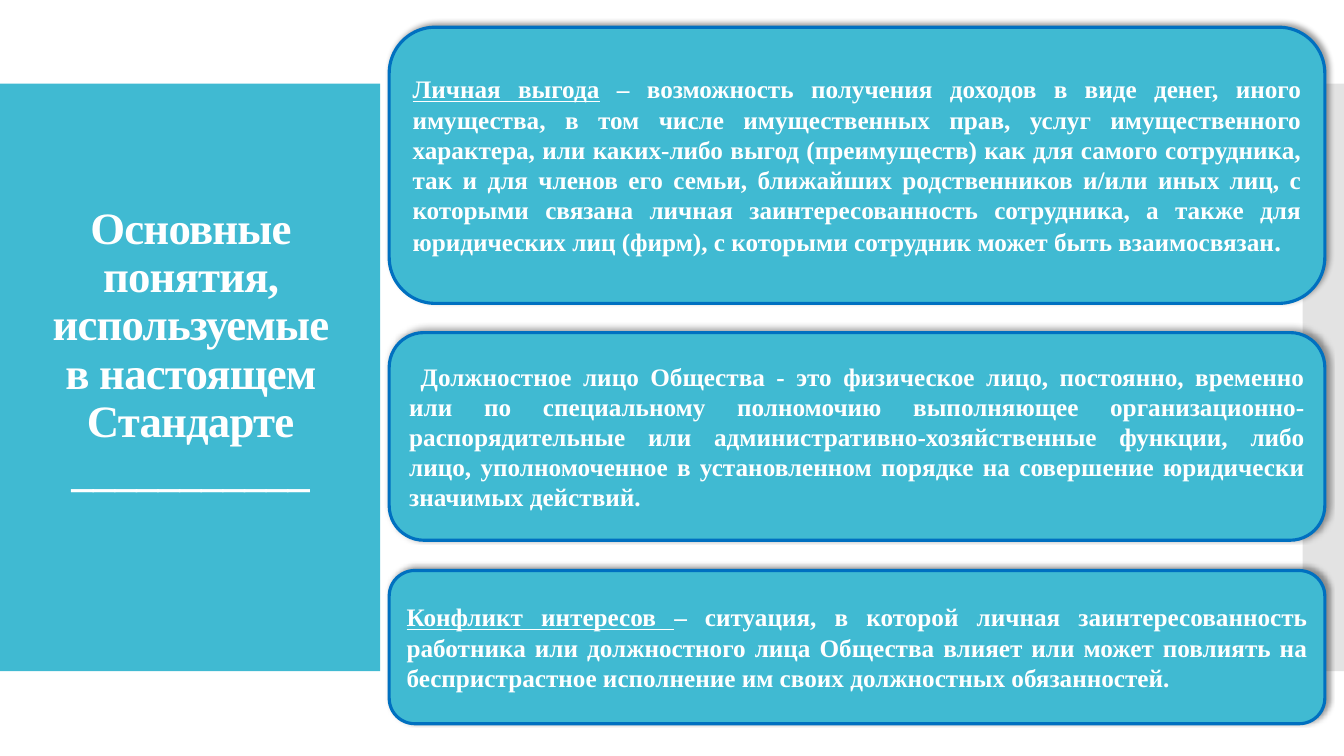
import pptx
import pptx.util
import pptx.dml.color
import pptx.enum.shapes
import pptx.enum.text
import pptx.oxml
import pptx.oxml.ns
import lxml.etree

Inches = pptx.util.Inches
Pt = pptx.util.Pt
RGBColor = pptx.dml.color.RGBColor
MSO_SHAPE = pptx.enum.shapes.MSO_SHAPE
MSO_ANCHOR = pptx.enum.text.MSO_ANCHOR
PP_ALIGN = pptx.enum.text.PP_ALIGN
qn = pptx.oxml.ns.qn

TEAL = RGBColor(0x40, 0xBA, 0xD2)
GRAY = RGBColor(0xC8, 0xC8, 0xC8)
BLUE = RGBColor(0x00, 0x70, 0xC0)
WHITE = RGBColor(0xFF, 0xFF, 0xFF)

SHADOW = (
    f'<a:effectLst {pptx.oxml.ns.nsdecls("a")}>'
    f'<a:outerShdw blurRad="{Pt(4)}" dist="{Pt(3)}" dir="{315 * 60000}" algn="bl" rotWithShape="0">'
    '<a:srgbClr val="000000"><a:alpha val="40000"/></a:srgbClr>'
    '</a:outerShdw></a:effectLst>'
)


def add_block(preset, left, top, width, height, color):
    block = slide.shapes.add_shape(preset, Inches(left), Inches(top), Inches(width), Inches(height))
    block.shadow.inherit = False
    block.fill.solid()
    block.fill.fore_color.rgb = color
    block.line.fill.background()
    return block


def add_text(paragraph, text, size, underline=False):
    run = paragraph.add_run()
    run.text = text
    run.font.name = "Times New Roman"
    run.font.size = Pt(size)
    run.font.bold = True
    run.font.underline = underline
    run.font.color.rgb = WHITE
    return run


presentation = pptx.Presentation()
presentation.slide_width = Inches(13.33)
presentation.slide_height = Inches(7.5)
slide = presentation.slides.add_slide(presentation.slide_layouts[5])

add_block(MSO_SHAPE.RECTANGLE, 0, 0.83, 3.77, 5.83, TEAL)
edge_band = add_block(MSO_SHAPE.RECTANGLE, 12.92, 0.83, 0.41, 5.83, GRAY)
band_color = edge_band.fill._xPr.find(qn("a:solidFill"))[0]
lxml.etree.SubElement(band_color, qn("a:alpha"), val="50000")

title = slide.shapes.title
slide.shapes._spTree.append(title._element)
title.left, title.top = Inches(0.28), Inches(1.23)
title.width, title.height = Inches(3.22), Inches(5.03)
title.text_frame.word_wrap = True
title.text_frame.auto_size = pptx.enum.text.MSO_AUTO_SIZE.NONE
title.text_frame.vertical_anchor = MSO_ANCHOR.MIDDLE
heading = title.text_frame.paragraphs[0]
heading.alignment = PP_ALIGN.CENTER
heading.line_spacing = 0.9
for line in ("Основные понятия, используемые в настоящем Стандарте", "___________"):
    heading_run = add_text(heading, line, 32)
    heading_run._r.get_or_add_rPr().set("spc", "-60")
    heading.add_line_break()
heading.font.size = Pt(32)

definitions = [
    (0.27, 2.74, [
        ("Личная выгода", 18, True),
        (" – возможность получения доходов в виде денег, иного имущества, в том числе "
         "имущественных прав, услуг имущественного характера, или каких-либо выгод "
         "(преимуществ) как для самого сотрудника, так и для членов его семьи, ближайших "
         "родственников и/или иных лиц, с которыми связана личная заинтересованность "
         "сотрудника, а также для юридических лиц (фирм), с которыми сотрудник может быть "
         "взаимосвязан", 18, False),
        (".", 19, False),
    ]),
    (3.3, 2.06, [
        (" Должностное лицо Общества - это физическое лицо, постоянно, временно или по "
         "специальному полномочию выполняющее организационно-распорядительные или "
         "административно-хозяйственные функции, либо лицо, уполномоченное в установленном "
         "порядке на совершение юридически значимых действий.", 18, False),
    ]),
    (5.66, 1.52, [
        ("Конфликт интересов ", 18, True),
        ("– ситуация, в которой личная заинтересованность работника или должностного лица "
         "Общества влияет или может повлиять на беспристрастное исполнение им своих "
         "должностных обязанностей.", 18, False),
    ]),
]

for top, height, parts in definitions:
    card = add_block(MSO_SHAPE.FLOWCHART_ALTERNATE_PROCESS, 3.86, top, 9.28, height, TEAL)
    card.line.color.rgb = BLUE
    card.line.width = Pt(2.25)
    properties = card._element.spPr
    properties.replace(properties.find(qn("a:effectLst")), pptx.oxml.parse_xml(SHADOW))
    card.text_frame.word_wrap = True
    card.text_frame.vertical_anchor = MSO_ANCHOR.MIDDLE
    definition = card.text_frame.paragraphs[0]
    definition.alignment = PP_ALIGN.JUSTIFY
    for text, size, underline in parts:
        add_text(definition, text, size, underline)

presentation.save("out.pptx")
